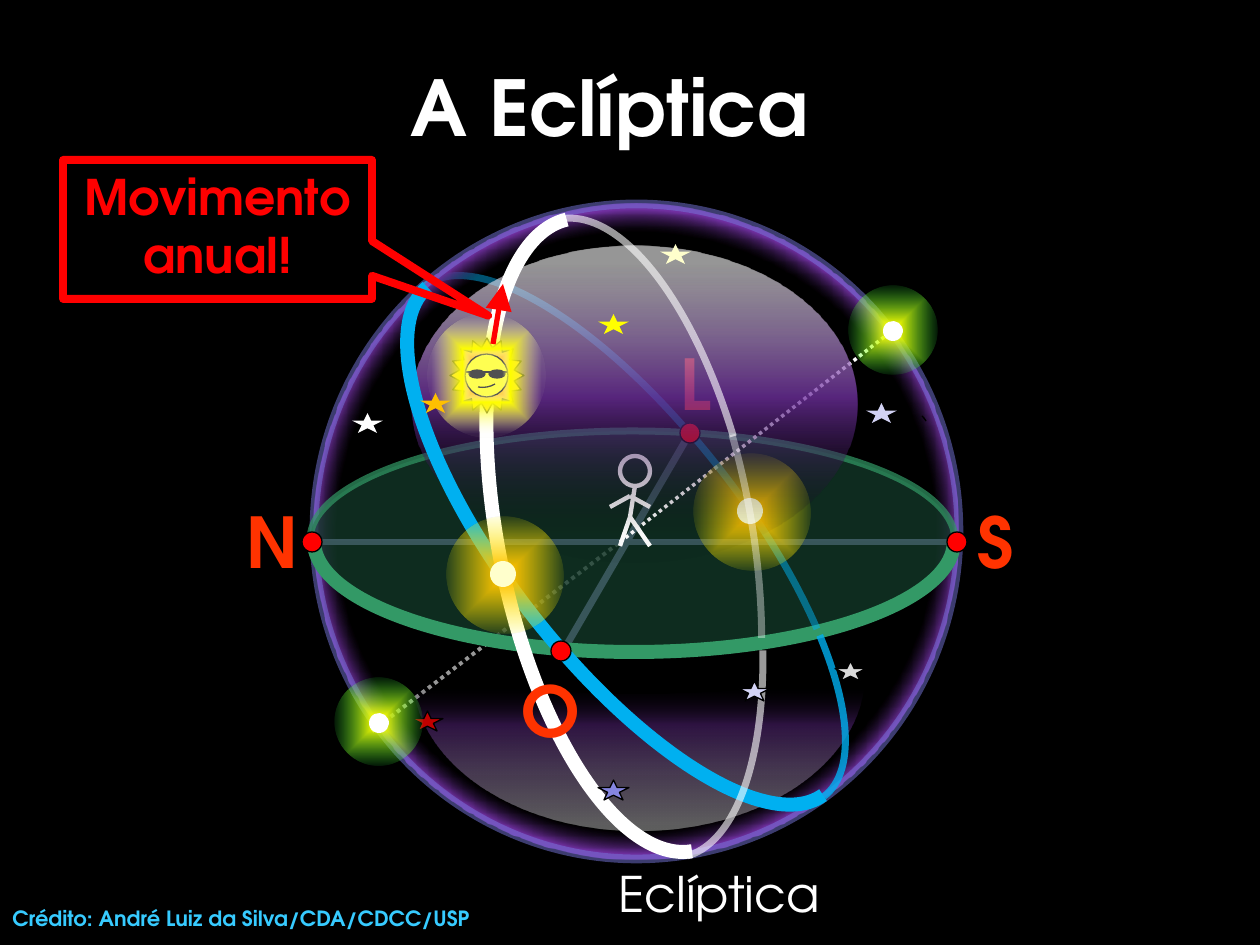
import pptx
import lxml.etree
import pptx.dml.color
import pptx.enum.dml
import pptx.enum.shapes
import pptx.enum.text
import pptx.oxml.ns
import pptx.util

SCALE = 914400 / 126
FONT = "TeX Gyre Adventor"
HUE = {
    "night": "000000", "white": "FFFFFF", "sky": "00B0F0", "violet": "7030A0",
    "rim": "7878DE", "axis": "A5A5E9", "green": "339966", "moss": "143C2B",
    "mark": "FF3300", "red": "FF0000", "gold": "FFC000", "sun": "FFFF00",
    "cream": "FFFFCC", "lime": "21FF46", "lilac": "D2D2F4", "blood": "C00000",
    "blue": "8585E0", "gray": "D9D9D9", "credit": "37CBFF",
}
KIND = pptx.enum.shapes.MSO_SHAPE
ALIGN = pptx.enum.text.PP_ALIGN
ANCHOR = pptx.enum.text.MSO_ANCHOR
HALF = (162.18, 53.8)
TURN = 305.7
BEND = 0.55
GOLD = [(7, "gold", 100), (79, "sun", 0)]
LIME = [(7, "sun", 100), (77, "lime", 2)]
qn = pptx.oxml.ns.qn


def px(num):
    """Turn pixels into EMU."""
    return pptx.util.Emu(round(num * SCALE))


def rgb(hue):
    """Give the colour of a name."""
    return pptx.dml.color.RGBColor.from_string(HUE[hue])


def sub(node, tag, **attrs):
    """Add a drawing element with its attributes."""
    return lxml.etree.SubElement(node, qn("a:" + tag), {k: str(v) for k, v in attrs.items()})


def fade(node, part):
    """Set the opacity percent of the colours in a node."""
    for clr in node.iter(qn("a:srgbClr")):
        sub(clr, "alpha", val=part * 1000)


def blend(shape, stops, way):
    """Fill a shape with a gradient, by outline name or by angle."""
    shape.fill.gradient()
    grad = shape._element.spPr.find(qn("a:gradFill"))
    grad.clear()
    grad.set("rotWithShape", "1")
    row = sub(grad, "gsLst")
    for pos, hue, part in stops:
        clr = sub(sub(row, "gs", pos=pos * 1000), "srgbClr", val=HUE[hue])
        sub(clr, "alpha", val=part * 1000)
    if isinstance(way, str):
        sub(sub(grad, "path", path=way), "fillToRect", l=50000, t=50000, r=50000, b=50000)
    else:
        sub(grad, "lin", ang=way * 60000, scaled=0)


def ink(shape, hue, wide, part=100):
    """Set the line of a shape."""
    shape.line.color.rgb = rgb(hue)
    shape.line.width = pptx.util.Pt(wide)
    if part < 100:
        fade(shape._element.spPr.find(qn("a:ln")), part)


def paint(shape, fill=None, line=None, stops=None, way="shape"):
    """Set fill and line; each is a tuple of name and numbers."""
    shape.shadow.inherit = False
    if stops:
        blend(shape, stops, way)
    elif fill:
        shape.fill.solid()
        shape.fill.fore_color.rgb = rgb(fill[0])
        if len(fill) > 1:
            fade(shape._element.spPr.find(qn("a:solidFill")), fill[1])
    else:
        shape.fill.background()
    if line:
        ink(shape, *line)
    else:
        shape.line.fill.background()
    return shape


def form(tree, kind, box, turn=0, adj=(), **look):
    """Add a preset shape."""
    shape = tree.add_shape(kind, *map(px, box))
    shape.rotation = turn
    for num, val in enumerate(adj):
        shape.adjustments[num] = val
    return paint(shape, **look)


def curve(tree, dots, **look):
    """Add a freeform of cubic curves, three points to each after the start."""
    dots = [(px(x), px(y)) for x, y in dots]
    pen = tree.build_freeform(*dots[0])
    pen.add_line_segments(dots[1:], close=False)
    shape = pen.convert_to_shape()
    track = next(shape._element.spPr.iter(qn("a:path")))
    for num, leg in enumerate(track.findall(qn("a:lnTo"))):
        if num % 3 == 0:
            bow = sub(track, "cubicBezTo")
        bow.append(leg[0])
        track.remove(leg)
    return paint(shape, **look)


def oval(box, parts):
    """List curve points for quarters of an ellipse, from the right and down."""
    x, y, w, h = box
    dots = [(1, 0)]
    a, b = 1, 0
    for _ in range(parts):
        c, d = -b, a
        dots += [(a + BEND * c, b + BEND * d), (c + BEND * a, d + BEND * b), (c, d)]
        a, b = c, d
    return [(x + w / 2 * (1 + a), y + h / 2 * (1 + b)) for a, b in dots]


def join(tree, ends, line, dash=False, head=False):
    """Add a straight line."""
    rod = tree.add_connector(pptx.enum.shapes.MSO_CONNECTOR.STRAIGHT, *map(px, ends))
    ink(rod, *line)
    if dash:
        rod.line.dash_style = pptx.enum.dml.MSO_LINE.ROUND_DOT
    if head:
        sub(rod._element.spPr.find(qn("a:ln")), "tailEnd", type="triangle", w="lg", len="lg")
    sub(rod._element.spPr, "effectLst")


def words(frame, text, size, hue, bold=True, align=ALIGN.LEFT, anchor=ANCHOR.TOP):
    """Write one paragraph in a text frame."""
    frame.word_wrap = True
    frame.vertical_anchor = anchor
    frame.text = text
    para = frame.paragraphs[0]
    para.alignment = align
    para.font.name, para.font.size = FONT, pptx.util.Pt(size)
    para.font.bold, para.font.color.rgb = bold, rgb(hue)


def label(tree, box, *args, **look):
    """Add a text box."""
    words(tree.add_textbox(*map(px, box)).text_frame, *args, **look)


def glow(tree, x, y, halo, core, hue, stops):
    """Draw a star with a halo and a core."""
    form(tree, KIND.OVAL, (x, y, *halo), TURN, stops=stops)
    left, top, size = core
    form(tree, KIND.OVAL, (x + left, y + top, size, size), TURN, fill=(hue,))


def man(tree, x, y):
    """Draw the watcher."""
    pen = ("white", 2.5)
    form(tree, KIND.OVAL, (x + 10, y, 30, 30), line=pen)
    for a, b, c, d in [(25, 30, 20, 61), (20, 61, 40, 90), (20, 61, 10, 90),
                       (20, 40, 40, 51), (0, 51, 20, 40)]:
        join(tree, (x + a, y + b, x + c, y + d), pen)


def sun(tree, x, y):
    """Draw the sun with its dark glasses."""
    pen = ("night", 0.75)
    form(tree, KIND.STAR_16_POINT, (x + 23, y + 24, 74, 75), adj=[0.375], fill=("gold",), line=pen)
    form(tree, KIND.OVAL, (x + 38, y + 40, 43, 43), fill=("sun",), line=pen)
    curve(tree, [(x + a, y + b) for a, b in [(51, 73), (57, 74), (63, 73), (68, 70)]], line=pen)
    for left in (42, 62):
        form(tree, KIND.OVAL, (x + left, y + 56, 16, 8), fill=("night",), line=pen)
    join(tree, (x + 38, y + 58, x + 81, y + 58), pen)
    form(tree, KIND.OVAL, (x, y, 118, 123),
         stops=[(27, "white", 32), (40, "sun", 100), (93, "cream", 4)])


def globe(tree, x, y):
    """Draw the sphere with its circles, stars and marks."""
    def at(a, b, *size):
        return (x + a, y + b, *size)

    def rod(a, b, c, d, line, **look):
        join(tree, (x + a, y + b, x + c, y + d), line, **look)

    def arc(box, turn, adj, *line):
        form(tree, KIND.ARC, at(*box), turn, adj, line=line)

    def dot(a, b):
        form(tree, KIND.OVAL, at(a, b, 20, 20), fill=("red",), line=("night", 0.75))

    def sign(text, a, b):
        label(tree, at(a, b, 49, 97), text, 40, "mark")

    def gold(a, b):
        glow(tree, *at(a, b), (116, 118), (43, 45, 26), "cream", GOLD)

    thin = (208, 20, 237, 644)
    edge = ("night", 0.75)
    arc((203, 18, 239, 644), 142.1, (54, 94.77), "sky", 4, 80)
    rod(72, 531, 320, 342, ("white", 2.25), dash=True)
    form(tree, KIND.OVAL, at(14, 4, 645, 655), line=("rim", 5, 50),
         stops=[(65, "night", 40), (70, "violet", 100)], way="circle")
    rod(262, 453, 390, 233, ("axis", 4))
    rod(12, 342, 658, 342, ("axis", 4))
    curve(tree, oval(at(10, 231, 645, 218), 4), fill=("moss", 73), line=("green", 4, 70))
    for text, a, b in [("N", -66, 292), ("L", 368, 134), ("S", 665, 292)]:
        sign(text, a, b)
    curve(tree, [at(626, 221), at(625, 219), at(624, 218), at(622, 216)], line=edge)
    curve(tree, oval(at(14, 230, 640, 222), 2), fill=("moss", 7), line=("green", 8))
    rod(320, 342, 588, 134, ("white", 2), dash=True)
    arc(thin, 142.1, (97.33, 145.46), "sky", 4, 50)
    man(tree, *at(310, 256))
    gold(394, 253)
    for a, b in [(380, 223), (2, 332), (647, 332)]:
        dot(a, b)
    form(tree, KIND.MOON, at(261, 327, 155, 451), 270, [0.875], way=0,
         stops=[(3, "white", 37), (68, "violet", 41), (94, "night", 0)])
    label(tree, at(181, 657, 476, 72), "Eclíptica", 28, "white", bold=False, align=ALIGN.CENTER)
    arc(thin, 142.1, (146.21, 162.09), "sky", 4, 80)
    form(tree, KIND.OVAL, at(112, 46, 446, 317), way=90,
         stops=[(6, "white", 58), (48, "violet", 77), (91, "night", 2)])
    arc((206, 18, 241, 644), 142.1, HALF, "sky", 8)
    dot(251, 441)
    arc((191, 14, 261, 644), 170, (88.48, 135.59), "white", 4, 38)
    arc((190, 19, 261, 644), 168.8, (137.23, 161.54), "white", 4, 60)
    arc((189, 13, 265, 644), 168.8, (54, 89.88), "white", 4, 60)
    arc((198, 13, 266, 644), 168.8, HALF, "white", 8)
    sun(tree, *at(127, 114))
    sign("O", 209, 461)
    rod(193, 144, 203, 84, ("red", 3), head=True)
    for a, b, hue, line in [
            (439, 481, "lilac", edge), (112, 511, "blood", edge), (298, 580, "blue", edge),
            (535, 461, "gray", edge), (566, 203, "lilac", None), (120, 193, "gold", None),
            (52, 213, "white", None), (298, 114, "sun", None), (360, 44, "cream", None)]:
        form(tree, KIND.STAR_5_POINT, at(a, b, 31, 20), fill=(hue,), line=line)
    for a, b in [(35, 478), (549, 86)]:
        glow(tree, *at(a, b), (88, 88), (34, 35, 20), "white", LIME)
    gold(147, 316)


def head(title, box):
    """Place and write the title."""
    title.left, title.top, title.width, title.height = map(px, box)
    words(title.text_frame, "A Eclíptica", 44, "white", align=ALIGN.CENTER, anchor=ANCHOR.MIDDLE)


def note(tree, box):
    """Draw the callout on the yearly motion."""
    shape = form(tree, KIND.RECTANGULAR_CALLOUT, box, adj=(0.876, 0.62), line=("red", 4.5))
    words(shape.text_frame, "Movimento anual!", 28, "red", align=ALIGN.CENTER)


def main():
    """Build and save the slide."""
    deck = pptx.Presentation()
    deck.slide_width, deck.slide_height = px(1260), px(945)
    slide = deck.slides.add_slide(deck.slide_layouts[5])
    slide.background.fill.solid()
    slide.background.fill.fore_color.rgb = rgb("night")
    head(slide.shapes.title, (74, 27, 1071, 158))
    globe(slide.shapes, 300, 200)
    note(slide.shapes, (63, 160, 309, 139))
    label(slide.shapes, (0, 899, 1260, 38), "Crédito: André Luiz da Silva/CDA/CDCC/USP", 12, "credit")
    deck.save("out.pptx")


if __name__ == "__main__":
    main()
